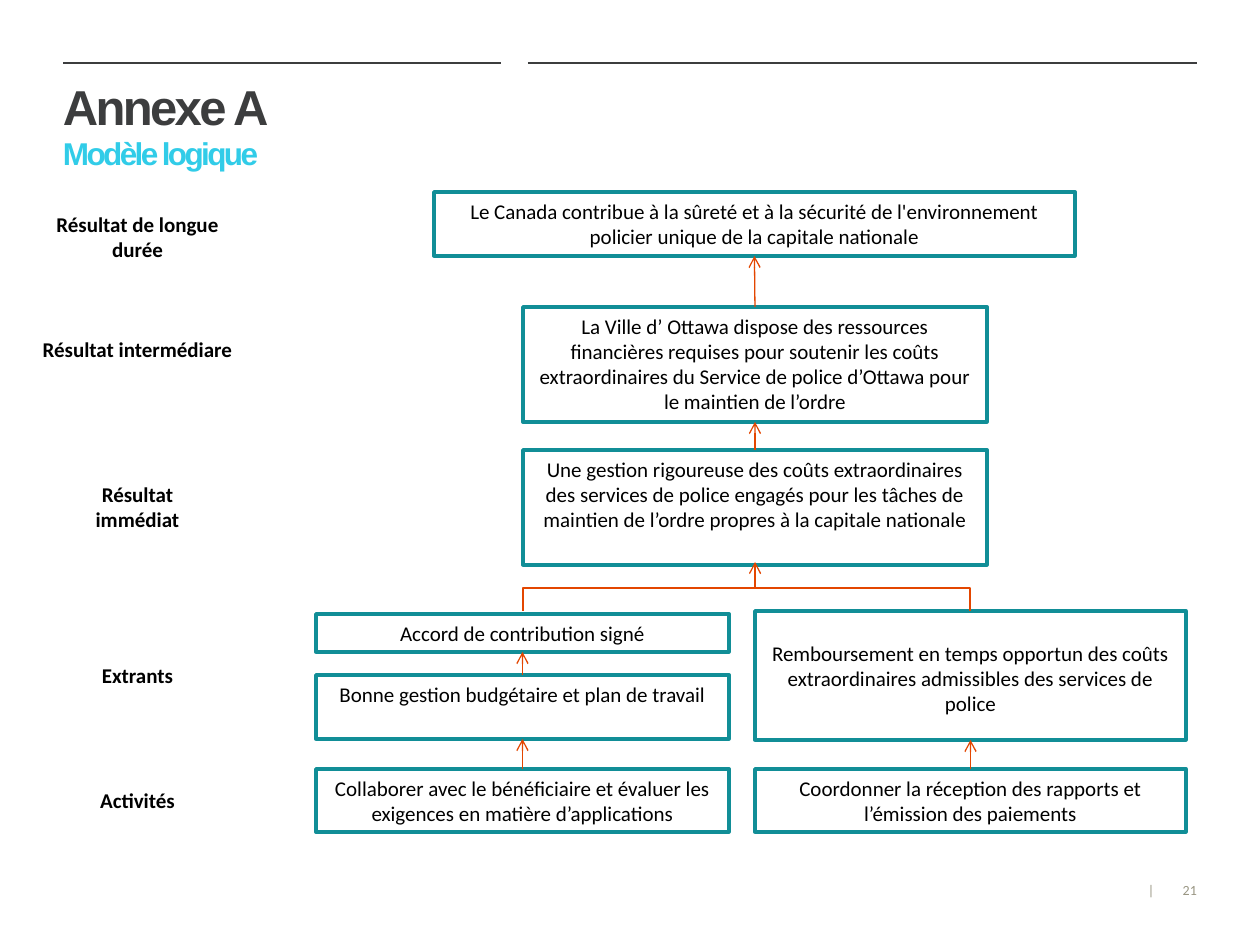
from pptx import Presentation
from pptx.dml.color import RGBColor
from pptx.enum.shapes import MSO_CONNECTOR as CONN, MSO_SHAPE as SHAPE
from pptx.enum.text import MSO_ANCHOR as ANCHOR, PP_ALIGN as ALIGN
from pptx.oxml.ns import qn
from pptx.util import Emu, Pt
from lxml import etree

PX = 914400 / 126
COLORS = {"dark": "3C3D3E", "cyan": "31CCE8", "teal": "118E97", "orange": "E34600",
          "grey": "999683", "black": "000000", "white": "FFFFFF"}
TOP, BOTTOM = 0, 2


def px(n):
    return Emu(round(n * PX))


def rgb(name):
    return RGBColor.from_string(COLORS[name])


def put_text(p, text, size=12, font="Calibri", color="black", bold=False,
             align=None, spacing=None):
    """Add one formatted run to a paragraph."""
    if align is not None:
        p.alignment = align
    r = p.add_run()
    r.text = text
    r.font.size, r.font.name, r.font.bold = Pt(size), font, bold
    r.font.color.rgb = rgb(color)
    if spacing is not None:
        r._r.get_or_add_rPr().set("spc", str(round(spacing * 100)))


def add_text_frame(slide, x, y, w, h, wrap=True):
    """Add a text box without insets and return its frame."""
    tf = slide.shapes.add_textbox(px(x), px(y), px(w), px(h)).text_frame
    tf.word_wrap = wrap
    tf.margin_left = tf.margin_right = tf.margin_top = tf.margin_bottom = 0
    return tf


def add_box(slide, x, y, w, h, lines, line=None, bold=False, anchor=ANCHOR.TOP, drop=0):
    """Add a white rectangle; drop lowers its text area."""
    sp = slide.shapes.add_shape(SHAPE.RECTANGLE, px(x), px(y), px(w), px(h))
    sp.shadow.inherit = False
    sp.fill.solid()
    sp.fill.fore_color.rgb = rgb("white")
    if line:
        sp.line.color.rgb = rgb(line)
        sp.line.width = Pt(2)
    else:
        sp.line.fill.background()
    tf = sp.text_frame
    tf.word_wrap = True
    tf.vertical_anchor = anchor
    tf.margin_top += px(drop)
    for i, text in enumerate(lines):
        p = tf.add_paragraph() if i else tf.paragraphs[0]
        put_text(p, text, bold=bold, align=ALIGN.CENTER)
    return sp


def add_line(slide, x1, y1, x2, y2, color, width, kind=CONN.STRAIGHT, arrow=False):
    c = slide.shapes.add_connector(kind, px(x1), px(y1), px(x2), px(y2))
    c.line.color.rgb = rgb(color)
    c.line.width = Pt(width)
    if arrow:
        etree.SubElement(c.line._get_or_add_ln(), qn("a:tailEnd"), type="arrow")
    etree.SubElement(c._element.spPr, qn("a:effectLst"))
    return c


def add_arrow(slide, lower, upper):
    """Join the top of one box to the bottom of the box above it."""
    c = add_line(slide, 0, 0, 0, 0, "orange", 0.75, arrow=True)
    c.begin_connect(lower, TOP)
    c.end_connect(upper, BOTTOM)


def add_elbow(slide, x1, y1, x2, y2, arrow=False, bend=50000):
    """Rising elbow that leaves vertically: a turned horizontal elbow."""
    cx, cy = (x1 + x2) / 2, (y1 + y2) / 2
    half_w, half_h = (y1 - y2) / 2, abs(x2 - x1) / 2
    side = 1 if x2 > x1 else -1
    c = add_line(slide, cx + side * half_w, cy + half_h, cx - side * half_w, cy - half_h,
                 "orange", 0.75, CONN.ELBOW, arrow)
    spPr = c._element.spPr
    spPr.find(qn("a:xfrm")).set("rot", str((90 if side > 0 else 270) * 60000))
    guides = spPr.find(qn("a:prstGeom")).get_or_add_avLst()
    etree.SubElement(guides, qn("a:gd"), name="adj1", fmla=f"val {bend}")


def header(slide, x, y, w, h):
    # Two rules above the title
    for x1, x2 in ((x, x + 438), (x + 465, x + w)):
        add_line(slide, x1, y, x2, y, "dark", 1)
    # Title and subtitle
    p = add_text_frame(slide, x, y + 18, 438, h - 18).paragraphs[0]
    p.line_spacing = 0.95
    style = {"font": "Arial", "bold": True, "spacing": -1.5}
    put_text(p, "Annexe A", size=28, color="dark", **style)
    p.add_line_break()
    put_text(p, "Modèle logique", size=18, color="cyan", **style)


def level_labels(slide, x, y, w):
    levels = [(0, 63, ["Résultat de longue durée"]),
              (125, 63, ["Résultat intermédiare"]),
              (270, 63, ["Résultat", "immédiat"]),
              (451, 38, ["Extrants"]),
              (576, 38, ["Activités"])]
    for dy, h, lines in levels:
        add_box(slide, x, y + dy, w, h, lines, bold=True)


def logic_model(slide, x, y):
    def box(dx, dy, w, h, text, **kw):
        return add_box(slide, x + dx, y + dy, w, h, [text], line="teal", **kw)

    left_w, right_x, right_w = 413, 439, 431
    mid_x, mid_w = 207, 464

    # Activities
    reports = box(right_x, 577, right_w, 63,
                  "Coordonner la réception des rapports et l’émission des paiements")
    collaborate = box(0, 577, left_w, 63, "Collaborer avec le bénéficiaire et évaluer "
                      "les exigences en matière d’applications")
    # Outputs
    budget = box(0, 483, left_w, 64, "Bonne gestion budgétaire et plan de travail")
    accord = box(0, 422, left_w, 38, "Accord de contribution signé")
    refund = box(right_x, 419, right_w, 129, "Remboursement en temps opportun des coûts "
                 "extraordinaires admissibles des services de police",
                 anchor=ANCHOR.MIDDLE, drop=5)
    # Results
    immediate = box(mid_x, 258, mid_w, 115, "Une gestion rigoureuse des coûts extraordinaires "
                    "des services de police engagés pour les tâches de maintien de l’ordre "
                    "propres à la capitale nationale")
    intermediate = box(mid_x, 115, mid_w, 115, "La Ville d’ Ottawa dispose des ressources "
                       "financières requises pour soutenir les coûts extraordinaires du Service "
                       "de police d’Ottawa pour le maintien de l’ordre")
    long_term = box(118, 0, 641, 64, "Le Canada contribue à la sûreté et à la sécurité de "
                    "l'environnement policier unique de la capitale nationale")

    # Links from each level to the next
    for lower, upper in ((collaborate, budget), (reports, refund), (budget, accord),
                         (immediate, intermediate), (intermediate, long_term)):
        add_arrow(slide, lower, upper)
    add_elbow(slide, x + 207, y + 419, x + 439, y + 370, arrow=True, bend=46700)
    add_elbow(slide, x + 654, y + 419, x + 439, y + 373)


def footer(slide, x, y):
    for dx, w, text in ((0, 4, "|"), (31, 18, "21")):
        tf = add_text_frame(slide, x + dx, y, w, 16, wrap=False)
        put_text(tf.paragraphs[0], text, size=8, color="grey", align=ALIGN.RIGHT)


def main():
    prs = Presentation()
    prs.slide_width, prs.slide_height = px(1260), px(945)
    slide = prs.slides.add_slide(prs.slide_layouts[6])
    header(slide, 63, 63, 1134, 187)
    level_labels(slide, 26, 205, 223)
    logic_model(slide, 316, 192)
    footer(slide, 1148, 882)
    prs.save("out.pptx")


if __name__ == "__main__":
    main()
